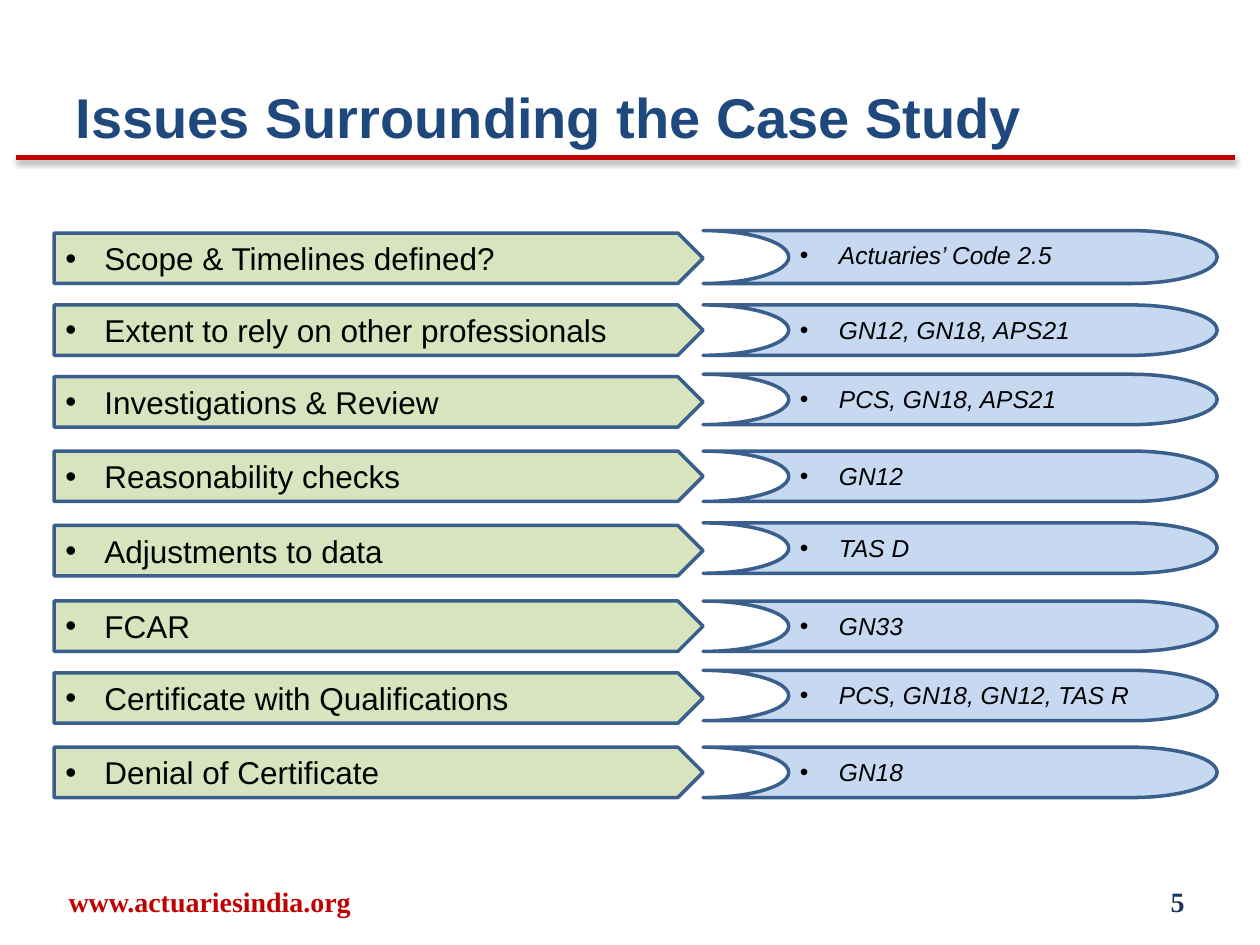
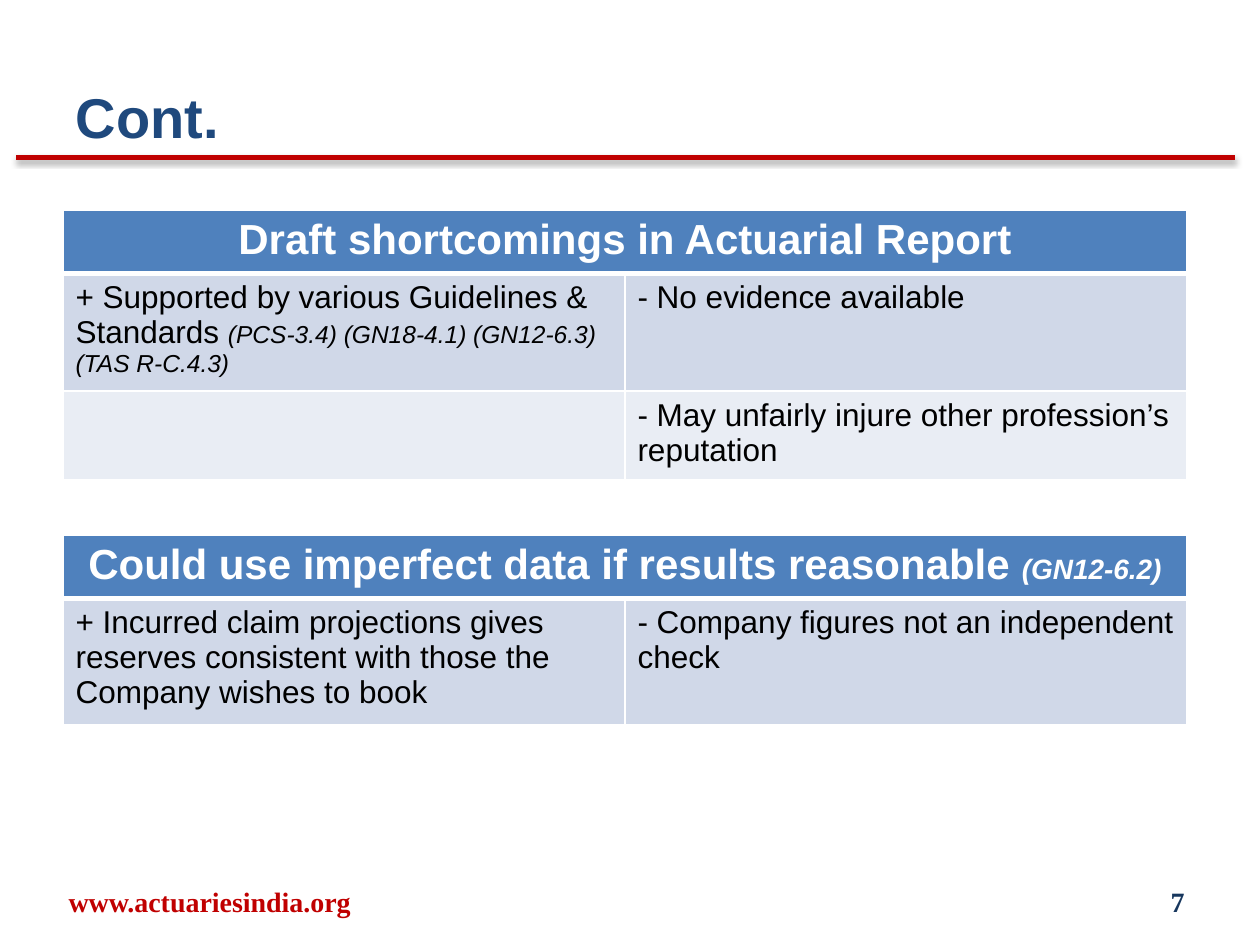
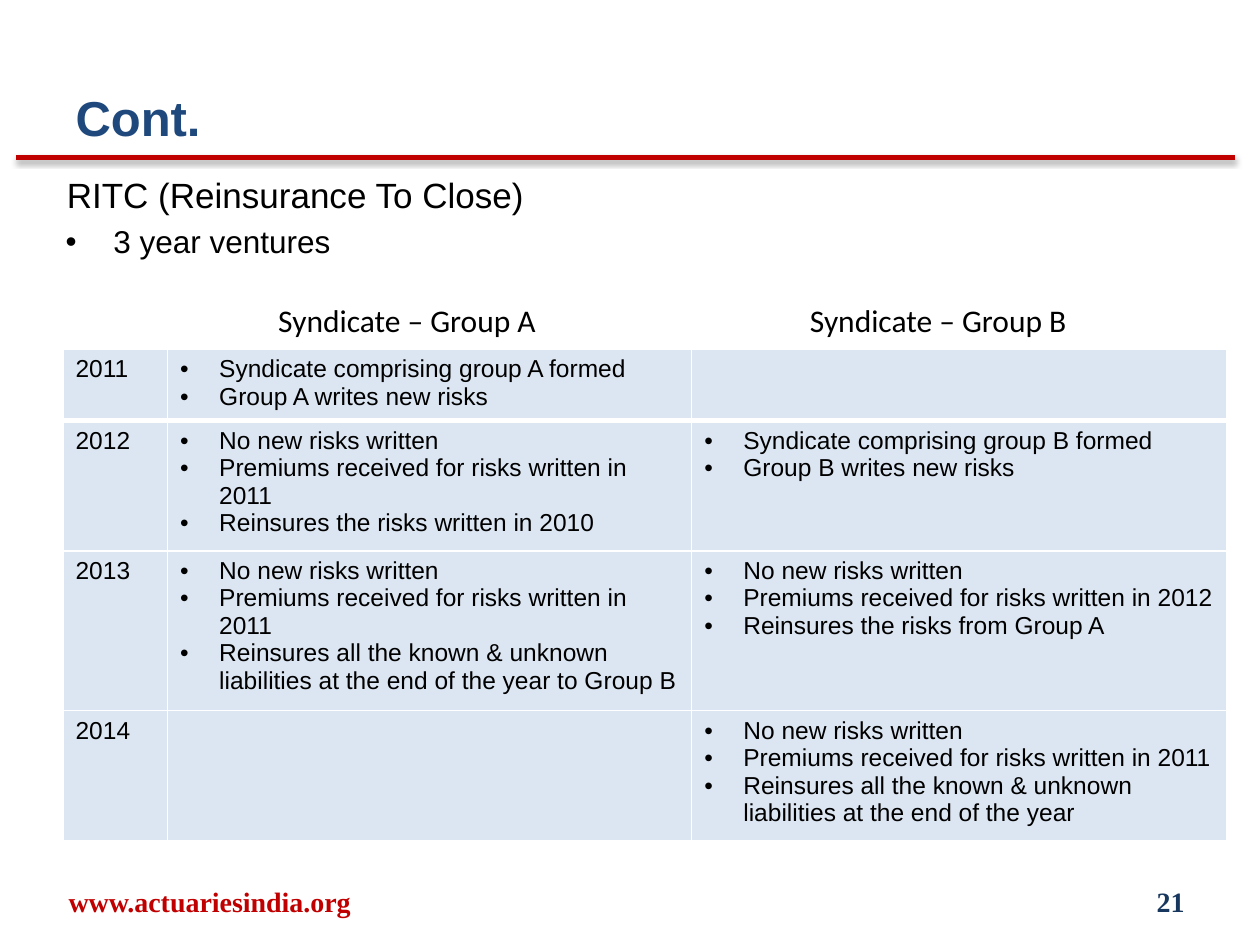
"""Build three actuarial case study slides: issues, draft shortcomings and reinsurance to close."""
import dataclasses

import lxml.etree
import pptx
import pptx.dml.color
import pptx.enum.shapes
import pptx.enum.text
import pptx.oxml
import pptx.oxml.ns
import pptx.util

Inches = pptx.util.Inches
Pt = pptx.util.Pt
RGB = pptx.dml.color.RGBColor.from_string
qn = pptx.oxml.ns.qn
Align = pptx.enum.text.PP_ALIGN
Anchor = pptx.enum.text.MSO_ANCHOR
Preset = pptx.enum.shapes.MSO_SHAPE


@dataclasses.dataclass(frozen=True)
class Style:
    size: int
    color: str = "000000"
    bold: bool = False
    italic: bool = False
    font: str = "Arial"


class Theme:
    rule = "C00000"
    outline = "3A5F8C"
    issue = "D7E4BD"
    reference = "C6D9F1"
    header = "4F81BD"
    dark_band = "D0D8E8"
    light_band = "E9EDF4"
    timeline = "DCE6F2"
    border = "FFFFFF"
    title = Style(32, "1F497D", bold=True)
    small_title = Style(28, "1F497D", bold=True)
    website = Style(16, "C00000", bold=True, font="Times New Roman")
    number = Style(16, "17375E", bold=True, font="Times New Roman")
    lead = Style(20)
    text = Style(18)
    small = Style(14)
    citation = Style(14, italic=True)
    table_title = Style(24, "FFFFFF", bold=True)
    title_citation = Style(16, "FFFFFF", bold=True, italic=True)
    group = Style(18, font="Calibri")


def write(paragraph, runs, align=Align.LEFT, margin=0, hang=0):
    """Fill a paragraph with (text, style) runs, bulleted when it has a hanging indent."""
    paragraph.alignment = align
    properties = paragraph._p.get_or_add_pPr()
    properties.set("marL", str(Inches(margin)))
    properties.set("indent", str(-Inches(hang)))
    if hang:
        lxml.etree.SubElement(properties, qn("a:buFont")).set("typeface", "Arial")
        lxml.etree.SubElement(properties, qn("a:buChar")).set("char", "•")
    else:
        lxml.etree.SubElement(properties, qn("a:buNone"))
    for text, style in runs:
        run = paragraph.add_run()
        run.text = text
        run.font.name = style.font
        run.font.size = Pt(style.size)
        run.font.bold = style.bold
        run.font.italic = style.italic
        run.font.color.rgb = RGB(style.color)


def start_slide(layout, heading, style, number):
    """Add a slide with its title, red rule, website and slide number."""
    slide = deck.slides.add_slide(deck.slide_layouts[layout])
    rule = slide.shapes.add_connector(
        pptx.enum.shapes.MSO_CONNECTOR.STRAIGHT,
        Inches(0.13), Inches(1.25), Inches(9.8), Inches(1.25))
    rule.line.color.rgb = RGB(Theme.rule)
    rule.line.width = Pt(3)
    rule._element.spPr.append(pptx.oxml.parse_xml(
        f'<a:effectLst {pptx.oxml.ns.nsdecls("a")}>'
        f'<a:outerShdw blurRad="{Pt(3.1)}" dist="{Pt(1.6)}" dir="5400000" rotWithShape="0">'
        '<a:srgbClr val="000000"><a:alpha val="38000"/></a:srgbClr>'
        '</a:outerShdw></a:effectLst>'))
    title = slide.shapes.title
    title.left, title.top, title.width, title.height = map(Inches, (0.5, 0.3, 9, 1.25))
    title.text_frame.vertical_anchor = Anchor.MIDDLE
    write(title.text_frame.paragraphs[0], [(heading, style)])
    for text, left, width, footer_style, align in (
        ("www.actuariesindia.org", 0.08, 3.17, Theme.website, Align.CENTER),
        (number, 7.17, 2.33, Theme.number, Align.RIGHT),
    ):
        footer = slide.shapes.add_textbox(Inches(left), Inches(6.95), Inches(width), Inches(0.4))
        footer.text_frame.word_wrap = True
        footer.text_frame.vertical_anchor = Anchor.MIDDLE
        write(footer.text_frame.paragraphs[0], [(text, footer_style)], align)
    return slide


deck = pptx.Presentation()
deck.slide_width = Inches(10)
deck.slide_height = Inches(7.5)

issues = start_slide(5, "Issues Surrounding the Case Study", Theme.title, "5")
for issue, issue_top, reference, reference_top, reference_height in (
    ("Scope & Timelines defined?", 1.85, "Actuaries’ Code 2.5", 1.83, 0.42),
    ("Extent to rely on other professionals", 2.42, "GN12, GN18, APS21", 2.42, 0.4),
    ("Investigations & Review", 2.99, "PCS, GN18, APS21", 2.97, 0.4),
    ("Reasonability checks", 3.58, "GN12", 3.58, 0.4),
    ("Adjustments to data", 4.17, "TAS D", 4.15, 0.4),
    ("FCAR", 4.77, "GN33", 4.77, 0.4),
    ("Certificate with Qualifications", 5.34, "PCS, GN18, GN12, TAS R", 5.32, 0.4),
    ("Denial of Certificate", 5.93, "GN18", 5.93, 0.4),
):
    for preset, left, top, width, height, color, rotation in (
        (Preset.PENTAGON, 0.43, issue_top, 5.15, 0.4, Theme.issue, 0),
        (Preset.FLOWCHART_STORED_DATA, 5.58, reference_top, 4.08, reference_height,
         Theme.reference, 180),
    ):
        banner = issues.shapes.add_shape(
            preset, Inches(left), Inches(top), Inches(width), Inches(height))
        banner.rotation = rotation
        banner.shadow.inherit = False
        banner.fill.solid()
        banner.fill.fore_color.rgb = RGB(color)
        banner.line.color.rgb = RGB(Theme.outline)
        banner.line.width = Pt(2)
    for text, left, top, width, height, style in (
        (issue, 0.42, issue_top, 4.99, 0.4, Theme.text),
        (reference, 6.25, reference_top + 0.03, 3.42, 0.34, Theme.citation),
    ):
        label = issues.shapes.add_textbox(
            Inches(left), Inches(top), Inches(width), Inches(height))
        label.text_frame.word_wrap = True
        write(label.text_frame.paragraphs[0], [(text, style)], margin=0.31, hang=0.31)

shortcomings = start_slide(5, "Cont.", Theme.title, "7")

closing = start_slide(1, "Cont.", Theme.small_title, "21")
body = closing.placeholders[1]
body.left, body.top, body.width, body.height = map(Inches, (0.36, 1.33, 9, 4.95))
write(body.text_frame.paragraphs[0], [("RITC (Reinsurance To Close)", Theme.lead)], margin=0.07)
body.text_frame.paragraphs[0].space_before = Pt(0)
write(body.text_frame.add_paragraph(), [("3 year ventures", Theme.text)], margin=0.44, hang=0.38)
for group, left in (("Syndicate – Group A", 2.11), ("Syndicate – Group B", 6.33)):
    label = closing.shapes.add_textbox(Inches(left), Inches(2.34), Inches(2.27), Inches(0.4))
    label.text_frame.word_wrap = False
    write(label.text_frame.paragraphs[0], [(group, Theme.group)])

shortcoming_rows = [
    [[[("Draft shortcomings in Actuarial Report", Theme.table_title)]], []],
    [[[("+ Supported by various Guidelines & Standards ", Theme.text),
       ("(PCS-3.4) (GN18-4.1) (GN12-6.3) (TAS R-C.4.3)", Theme.citation)]],
     ["- No evidence available"]],
    [[], ["- May unfairly injure other profession’s reputation"]],
]
imperfect_data_rows = [
    [[[("Could use imperfect data if results reasonable ", Theme.table_title),
       ("(GN12-6.2)", Theme.title_citation)]], []],
    [["+ Incurred claim projections gives reserves consistent with those the Company "
      "wishes to book"],
     ["- Company figures not an independent check"]],
]
unwritten = "No new risks written"
premiums = "Premiums received for risks written in "
liabilities = "Reinsures all the known & unknown liabilities at the end of the year"
timeline_rows = [
    [["2011"], ["Syndicate comprising group A formed", "Group A writes new risks"], []],
    [["2012"], [unwritten, premiums + "2011", "Reinsures the risks written in 2010"],
     ["Syndicate comprising group B formed", "Group B writes new risks"]],
    [["2013"], [unwritten, premiums + "2011", liabilities + " to Group B"],
     [unwritten, premiums + "2012", "Reinsures the risks from Group A"]],
    [["2014"], [], [unwritten, premiums + "2011", liabilities]],
]
pair = (4.46, 4.46)
argument_fills = (Theme.header, Theme.dark_band, Theme.light_band)
for slide, top, widths, heights, rows, fills, style, titled in (
    (shortcomings, 4.25, pair, (0.47, 0.94), imperfect_data_rows, argument_fills,
     Theme.text, True),
    (shortcomings, 1.67, pair, (0.46, 0.88, 0.66), shortcoming_rows, argument_fills,
     Theme.text, True),
    (closing, 2.77, (0.83, 4.16, 4.25), (0.53, 0.98, 1.19, 0.97), timeline_rows,
     [Theme.timeline] * 4, Theme.small, False),
):
    table = slide.shapes.add_table(
        len(rows), len(widths), Inches(0.5), Inches(top),
        Inches(sum(widths)), Inches(sum(heights))).table
    for column, width in zip(table.columns, widths):
        column.width = Inches(width)
    for row, height in zip(table.rows, heights):
        row.height = Inches(height)
    if titled:
        table.cell(0, 0).merge(table.cell(0, 1))
    for row_index, row in enumerate(rows):
        for column_index, lines in enumerate(row):
            cell = table.cell(row_index, column_index)
            for side in ("L", "R", "T", "B"):
                heavy = (row_index, side) in ((0, "B"), (1, "T"))
                border = lxml.etree.SubElement(
                    cell._tc.get_or_add_tcPr(), qn(f"a:ln{side}"), w=str(Pt(3 if heavy else 1)))
                paint = lxml.etree.SubElement(border, qn("a:solidFill"))
                lxml.etree.SubElement(paint, qn("a:srgbClr"), val=Theme.border)
            cell.fill.solid()
            cell.fill.fore_color.rgb = RGB(fills[row_index])
            indent = 0.31 if not titled and column_index else 0
            align = Align.CENTER if titled and row_index == 0 else Align.LEFT
            for line_index, line in enumerate(lines):
                frame = cell.text_frame
                paragraph = frame.add_paragraph() if line_index else frame.paragraphs[0]
                runs = [(line, style)] if isinstance(line, str) else line
                write(paragraph, runs, align, indent, indent)

deck.save("out.pptx")
